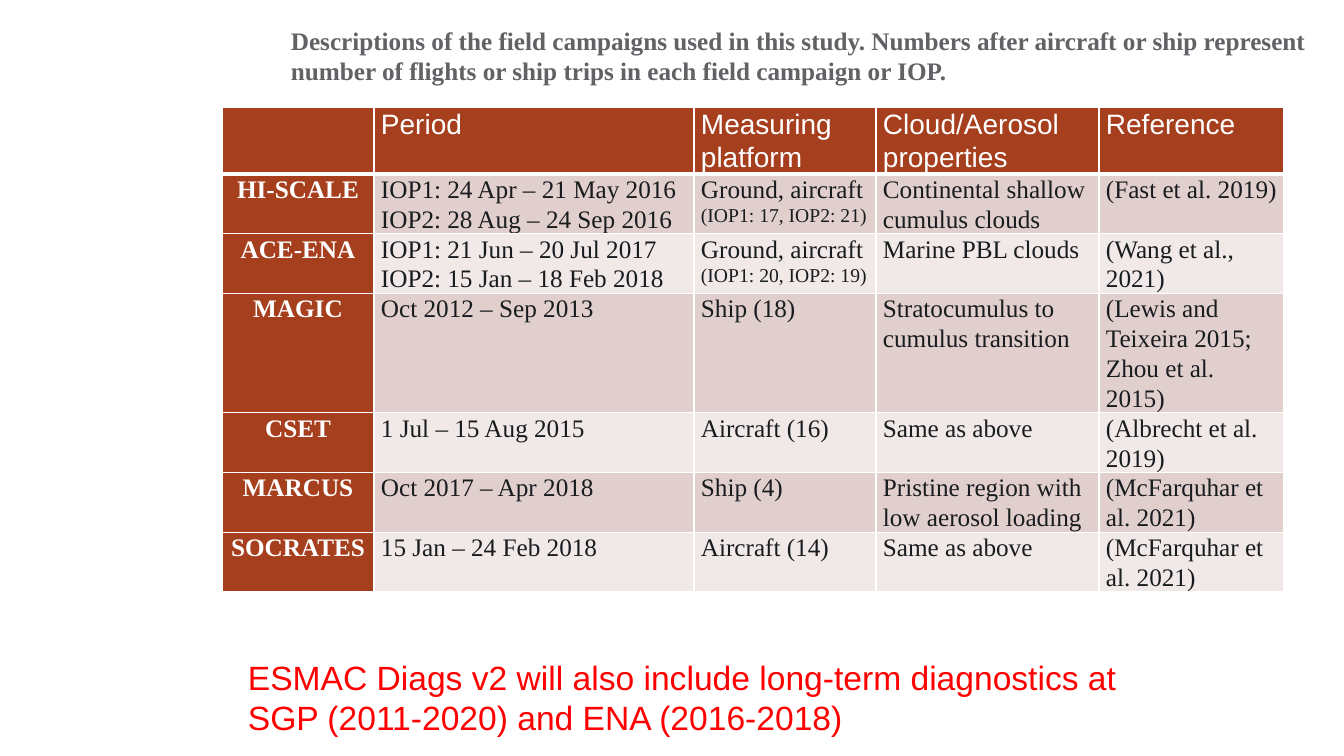
from lxml import etree
from pptx import Presentation, util as u
from pptx.dml.color import RGBColor
from pptx.enum import text as t
from pptx.oxml import ns

EMU_PER_PX = 12192000 / 1344
SERIF, SANS = "Times New Roman", "Arial"
RUST, INK, WHITE = "A63F1E", "191C1F", "FFFFFF"
BANDS = ("E1CFCD", "F1E8E8")
COLUMN_WIDTHS = (152, 320, 182, 223, 185)
ROW_HEIGHTS = (66, 59, 59, 119, 59, 59, 59)
HEADERS = ("", "Period", "Measuring platform", "Cloud/Aerosol properties", "Reference")
CAMPAIGNS = (
    ("HI-SCALE", "IOP1: 24 Apr – 21 May 2016\nIOP2: 28 Aug – 24 Sep 2016",
     ("Ground, aircraft ", "(IOP1: 17, IOP2: 21)"),
     "Continental shallow cumulus clouds", "(Fast et al. 2019)"),
    ("ACE-ENA", "IOP1: 21 Jun – 20 Jul 2017\nIOP2: 15 Jan – 18 Feb 2018",
     ("Ground, aircraft ", "(IOP1: 20, IOP2: 19)"),
     "Marine PBL clouds", "(Wang et al., 2021)"),
    ("MAGIC", "Oct 2012 – Sep 2013", "Ship (18)",
     "Stratocumulus to cumulus transition", "(Lewis and Teixeira 2015; Zhou et al. 2015)"),
    ("CSET", "1 Jul – 15 Aug 2015", "Aircraft (16)",
     "Same as above", "(Albrecht et al. 2019)"),
    ("MARCUS", "Oct 2017 – Apr 2018", "Ship (4)",
     "Pristine region with low aerosol loading", "(McFarquhar et al. 2021)"),
    ("SOCRATES", "15 Jan – 24 Feb 2018", "Aircraft (14)",
     "Same as above", "(McFarquhar et al. 2021)"),
)


def px(length):
    """Turn whole pixels into EMU."""
    return u.Emu(round(length * EMU_PER_PX))


def color(value):
    """Turn a hex string into a colour."""
    return RGBColor.from_string(value)


def write(frame, content, size=18, font=SERIF, ink=INK, bold=False,
          align=t.PP_ALIGN.LEFT, spacing=None, small_size=14):
    """Fill a text frame, one paragraph a line, with an optional smaller second run."""
    body, small = (content, "") if isinstance(content, str) else content
    for index, line in enumerate(body.split("\n")):
        paragraph = frame.add_paragraph() if index else frame.paragraphs[0]
        paragraph.alignment = align
        paragraph.line_spacing = spacing
        for words, points in ((line, size), (small, small_size)):
            if words:
                run = paragraph.add_run()
                run.text = words
                run.font.size, run.font.name, run.font.bold = u.Pt(points), font, bold
                run.font.color.rgb = color(ink)


def add_text(slide, box, content, **style):
    """Place a wrapping text box."""
    frame = slide.shapes.add_textbox(*map(px, box)).text_frame
    frame.word_wrap = True
    write(frame, content, **style)


def add_borders(cell, bottom):
    """Draw white borders on the four sides of a cell."""
    properties = cell._tc.get_or_add_tcPr()
    for side, points in (("L", 1), ("R", 1), ("T", 1), ("B", bottom)):
        line = etree.SubElement(properties, ns.qn(f"a:ln{side}"), w=str(u.Pt(points)))
        fill = etree.SubElement(line, ns.qn("a:solidFill"))
        etree.SubElement(fill, ns.qn("a:srgbClr"), val=WHITE)


def format_cell(cell, content, fill, bottom=1, **style):
    """Set the margins, borders, fill and text of a cell."""
    cell.margin_left = cell.margin_right = px(7)
    cell.margin_top = cell.margin_bottom = 0
    add_borders(cell, bottom)
    cell.fill.solid()
    cell.fill.fore_color.rgb = color(fill)
    write(cell.text_frame, content, spacing=1.07, **style)


def add_campaign_table(slide, left, top):
    """Build the table of field campaigns from its top left corner."""
    table = slide.shapes.add_table(
        len(ROW_HEIGHTS), len(COLUMN_WIDTHS), px(left), px(top),
        px(sum(COLUMN_WIDTHS)), px(sum(ROW_HEIGHTS))).table
    for column, width in zip(table.columns, COLUMN_WIDTHS):
        column.width = px(width)
    for row, height in zip(table.rows, ROW_HEIGHTS):
        row.height = px(height)
    for column, header in enumerate(HEADERS):
        format_cell(table.cell(0, column), header, RUST, bottom=3,
                    size=20, font=SANS, ink=WHITE)
    for row, (name, *details) in enumerate(CAMPAIGNS, 1):
        format_cell(table.cell(row, 0), name, RUST, ink=WHITE, bold=True,
                    align=t.PP_ALIGN.CENTER)
        for column, detail in enumerate(details, 1):
            format_cell(table.cell(row, column), detail, BANDS[(row - 1) % 2])


def build_campaign_slide(presentation):
    """Add the slide with caption, campaign table and closing note."""
    slide = presentation.slides.add_slide(presentation.slide_layouts[6])
    add_campaign_table(slide, 222, 107)
    add_text(slide, (281, 20, 1063, 71),
             "Descriptions of the field campaigns used in this study. Numbers after aircraft "
             "or ship represent number of flights or ship trips in each field campaign or IOP.",
             ink="616265", bold=True)
    add_text(slide, (238, 652, 1046, 92),
             "ESMAC Diags v2 will also include long-term diagnostics at\n"
             "SGP (2011-2020) and ENA (2016-2018)",
             size=24, font=SANS, ink="FF0000")


def main():
    """Create and save the presentation."""
    presentation = Presentation()
    presentation.slide_width, presentation.slide_height = px(1344), px(756)
    build_campaign_slide(presentation)
    presentation.save("out.pptx")


if __name__ == "__main__":
    main()
